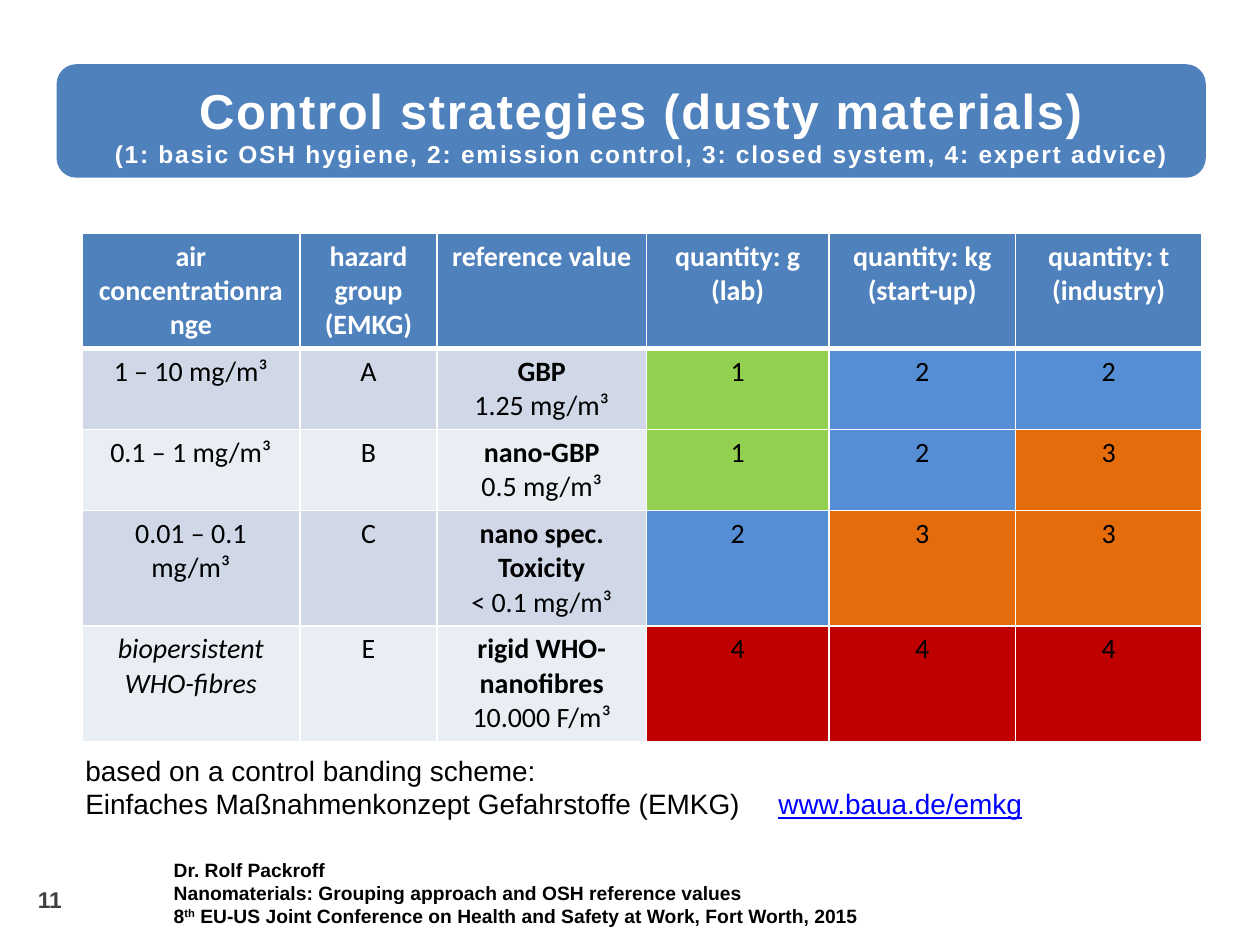
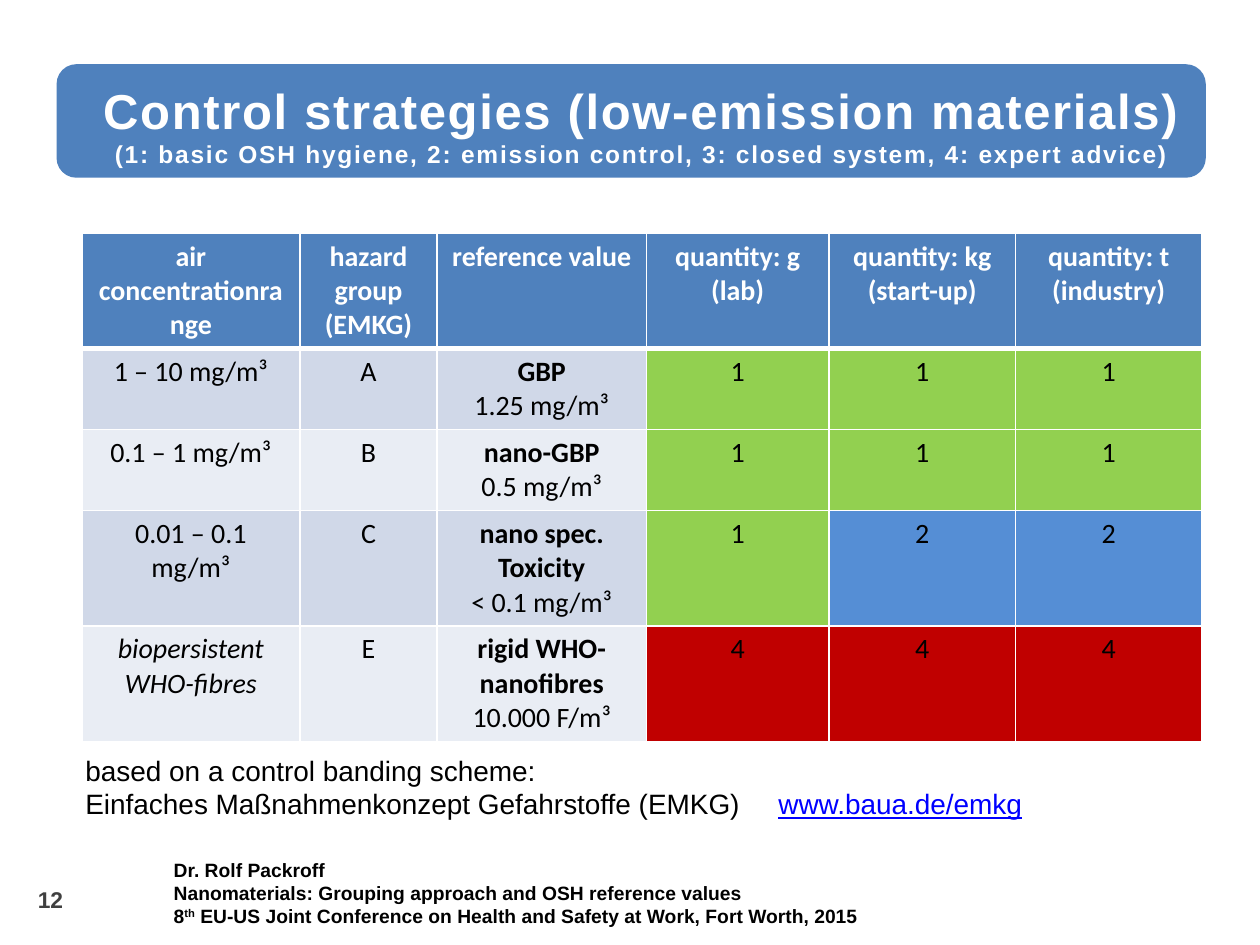
from lxml import etree
from pptx import Presentation
from pptx.dml.color import RGBColor
from pptx.enum.shapes import MSO_SHAPE
from pptx.enum.text import MSO_ANCHOR, PP_ALIGN
from pptx.oxml.ns import qn
from pptx.util import Inches, Pt

BLUE, WHITE, BLACK, GREY, LINK = "4F81BD", "FFFFFF", "000000", "404040", "0000FF"
BANDS = ["D0D8E8", "E9EDF4"]
LEVEL_FILLS = {"1": "92D050", "2": "558ED5", "3": "E46C0A", "4": "C00000"}

SLIDES = [
    (11, "Control strategies (dusty materials)", ["122", "123", "233", "444"]),
    (12, "Control strategies (low-emission materials)", ["111", "111", "122", "444"]),
]
SUBTITLE = "(1: basic OSH hygiene, 2: emission control, 3: closed system, 4: expert advice)"
HEADERS = [
    ["air concentrationrange"],
    ["hazard group", "(EMKG)"],
    ["reference value"],
    ["quantity: g", "(lab)"],
    ["quantity: kg", "(start-up)"],
    ["quantity: t", "(industry)"],
]
GROUPS = [
    ("1 – 10 mg/m³", "A", ["GBP"], "1.25 mg/m³"),
    ("0.1 – 1 mg/m³", "B", ["nano-GBP"], "0.5 mg/m³"),
    ("0.01 – 0.1 mg/m³", "C", ["nano spec. Toxicity"], "< 0.1 mg/m³"),
    ("biopersistent WHO-fibres", "E", ["rigid WHO-", "nanofibres"], "10.000 F/m³"),
]
COL_WIDTHS = [1.73, 1.09, 1.66, 1.45, 1.48, 1.48]
ROW_HEIGHTS = [0.9, 0.63, 0.63, 0.9, 0.9]
NOTE = ["based on a control banding scheme:", "Einfaches Maßnahmenkonzept Gefahrstoffe (EMKG)\t"]
NOTE_LINK = "www.baua.de/emkg"
FOOTER = [
    [("Dr. Rolf Packroff", False)],
    [("Nanomaterials: Grouping approach and OSH reference values", False)],
    [("8", False), ("th", True),
     (" EU-US Joint Conference on Health and Safety at Work, Fort Worth, 2015", False)],
]


def rgb(color):
    return RGBColor.from_string(color)


def add_run(p, text, size, color, bold=False, name="Arial"):
    r = p.add_run()
    r.text = text
    r.font.size, r.font.bold, r.font.name = Pt(size), bold, name
    r.font.color.rgb = rgb(color)
    return r


def next_paragraph(tf, i):
    return tf.add_paragraph() if i else tf.paragraphs[0]


def add_text_box(s, x, y, w, h):
    tf = s.shapes.add_textbox(Inches(x), Inches(y), Inches(w), Inches(h)).text_frame
    tf.word_wrap = True
    return tf


def add_title(s, title):
    band = s.shapes.add_shape(MSO_SHAPE.ROUNDED_RECTANGLE, Inches(0.46), Inches(0.52),
                              Inches(9.1), Inches(0.88))
    band.shadow.inherit = False
    band.fill.solid()
    band.fill.fore_color.rgb = rgb(BLUE)
    band.line.color.rgb = rgb(BLUE)
    band.line.width = Pt(1.5)
    sp = s.shapes.title
    sp._element.addprevious(band._element)
    sp.left, sp.top, sp.width, sp.height = Inches(0.58), Inches(0.59), Inches(9.02), Inches(0.8)
    tf = sp.text_frame
    tf.word_wrap = True
    tf.vertical_anchor = MSO_ANCHOR.TOP
    for i, (text, size) in enumerate([(title, 28), (SUBTITLE, 14)]):
        p = next_paragraph(tf, i)
        p.alignment = PP_ALIGN.CENTER
        r = add_run(p, text, size, WHITE, True)
        r._r.get_or_add_rPr().set("spc", "100")


def fill_cell(cell, lines, fill, color=BLACK, italic=False, bottom=1):
    tcPr = cell._tc.get_or_add_tcPr()
    for side, width in [("L", 1), ("R", 1), ("T", 1), ("B", bottom)]:
        ln = etree.SubElement(tcPr, qn(f"a:ln{side}"), w=str(Pt(width)))
        solid = etree.SubElement(ln, qn("a:solidFill"))
        etree.SubElement(solid, qn("a:srgbClr"), val=WHITE)
    cell.fill.solid()
    cell.fill.fore_color.rgb = rgb(fill)
    for i, (text, bold) in enumerate(lines):
        p = next_paragraph(cell.text_frame, i)
        p.alignment = PP_ALIGN.CENTER
        add_run(p, text, 16, color, bold, "Calibri").font.italic = italic


def add_control_table(s, levels):
    table = s.shapes.add_table(len(ROW_HEIGHTS), len(COL_WIDTHS), Inches(0.65), Inches(1.85),
                               Inches(sum(COL_WIDTHS)), Inches(sum(ROW_HEIGHTS))).table
    for col, w in zip(table.columns, COL_WIDTHS):
        col.width = Inches(w)
    for row, h in zip(table.rows, ROW_HEIGHTS):
        row.height = Inches(h)
    for c, lines in enumerate(HEADERS):
        fill_cell(table.cell(0, c), [(t, True) for t in lines], BLUE, WHITE, bottom=3)
    for i, ((air, group, names, value), row_levels) in enumerate(zip(GROUPS, levels)):
        fill = BANDS[i % 2]
        fill_cell(table.cell(i + 1, 0), [(air, False)], fill, italic=group == "E")
        fill_cell(table.cell(i + 1, 1), [(group, False)], fill)
        reference = [(n, True) for n in names] + [(value, False)]
        fill_cell(table.cell(i + 1, 2), reference, fill)
        for c, level in enumerate(row_levels, 3):
            fill_cell(table.cell(i + 1, c), [(level, False)], LEVEL_FILLS[level])


def add_note(s):
    tf = add_text_box(s, 0.58, 5.93, 8.96, 0.64)
    for i, text in enumerate(NOTE):
        p = next_paragraph(tf, i)
        add_run(p, text, 16, BLACK)
    tabs = etree.SubElement(p._p.get_or_add_pPr(), qn("a:tabLst"))
    etree.SubElement(tabs, qn("a:tab"), pos=str(Inches(5.5)), algn="l")
    add_run(p, NOTE_LINK, 16, LINK).font.underline = True


def add_footer(s, number):
    tf = add_text_box(s, 1.28, 6.76, 6.31, 0.66)
    for i, parts in enumerate(FOOTER):
        p = next_paragraph(tf, i)
        for text, raised in parts:
            r = add_run(p, text, 11, BLACK, True)
            if raised:
                r._r.get_or_add_rPr().set("baseline", "30000")
    tf = add_text_box(s, 0.3, 7.03, 0.57, 0.4)
    tf.margin_left = tf.margin_top = tf.margin_bottom = 0
    add_run(tf.paragraphs[0], str(number), 13, GREY, True)


def main():
    prs = Presentation()
    prs.slide_width, prs.slide_height = Inches(10), Inches(7.5)
    for number, title, levels in SLIDES:
        s = prs.slides.add_slide(prs.slide_layouts[5])
        add_title(s, title)
        add_control_table(s, levels)
        add_note(s)
        add_footer(s, number)
    prs.save("out.pptx")


if __name__ == "__main__":
    main()
